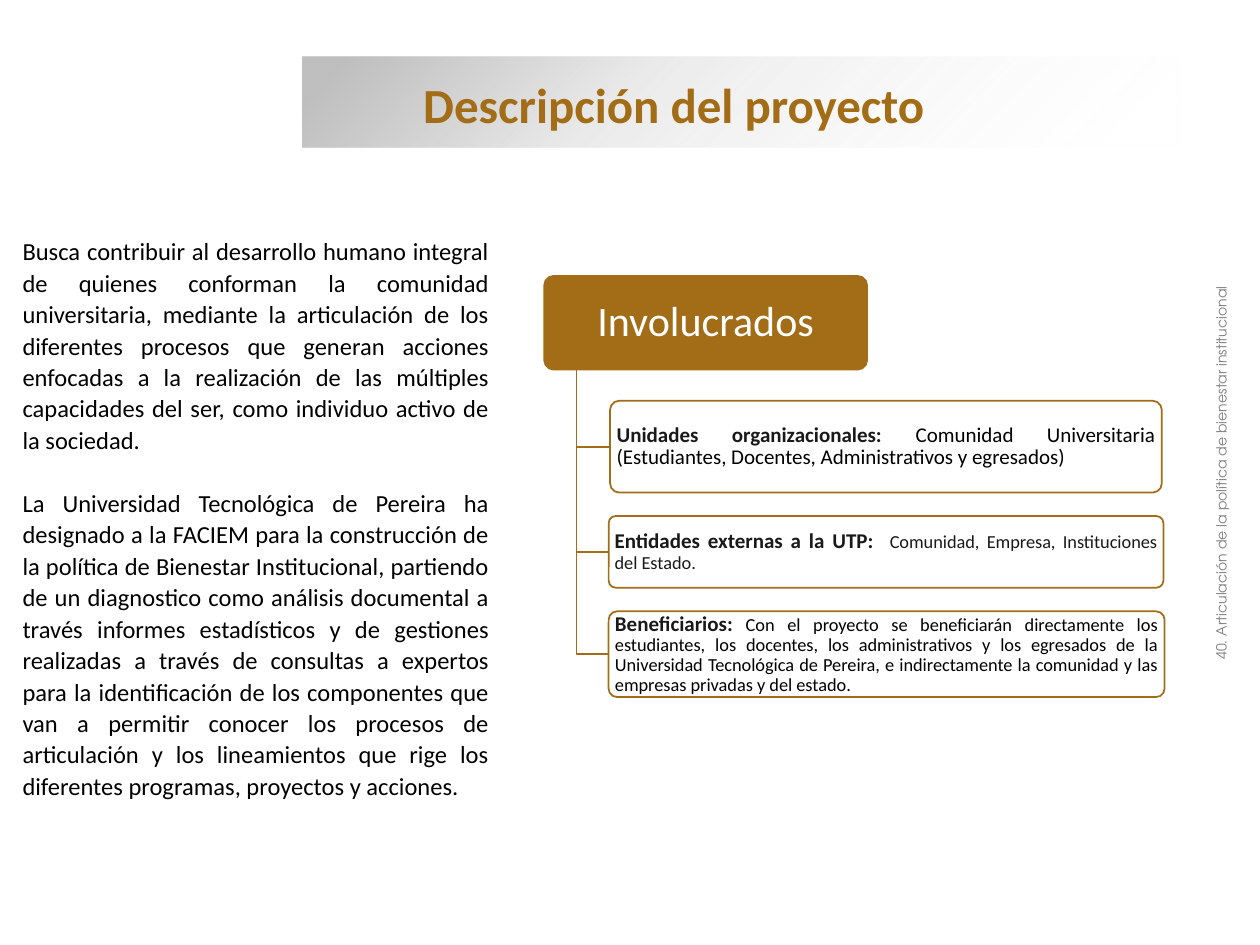
from dataclasses import dataclass
from lxml.etree import SubElement
from pptx import Presentation
from pptx.dml.color import RGBColor
from pptx.enum.shapes import MSO_SHAPE
from pptx.enum.text import MSO_ANCHOR, PP_ALIGN
from pptx.oxml.ns import qn
from pptx.util import Pt


@dataclass(frozen=True)
class Theme:
    gold: str = "A26D16"
    black: str = "000000"
    dark: str = "191919"
    gray: str = "808080"
    silver: str = "BFBFBF"
    white: str = "FFFFFF"
    sans: str = "Calibri"
    round: str = "TeX Gyre Adventor"
    title: float = 28
    head: float = 24
    body: float = 14
    card: float = 12
    small: float = 10.5
    side: float = 8


T = Theme()


def rgb(code):
    return RGBColor.from_string(code)


def apply(item, **vals):
    for name, val in vals.items():
        setattr(item, name, val)


def frame(shape, pad=(7.2, 3.6), anchor=MSO_ANCHOR.TOP):
    side, top = map(Pt, pad)
    apply(shape.text_frame, word_wrap=True, vertical_anchor=anchor,
          margin_left=side, margin_right=side, margin_top=top, margin_bottom=top)
    return shape.text_frame


def write(para, runs, **form):
    """Each run is (text, size, colour, bold)."""
    apply(para, **form)
    for text, size, color, bold in runs:
        run = para.add_run()
        run.text = text
        apply(run.font, name=T.sans, size=Pt(size), bold=bold)
        run.font.color.rgb = rgb(color)


def alpha(color, share):
    SubElement(color, qn("a:alpha"), val=str(share * 1000))


def fade(shape, stops):
    fill = shape.fill
    fill.gradient()
    fill.gradient_angle = 315
    group = shape.element.spPr.find(qn("a:gradFill")).find(qn("a:gsLst"))
    for old in list(group):
        group.remove(old)
    for pos, code, share in stops:
        stop = SubElement(group, qn("a:gs"), pos=str(pos * 1000))
        alpha(SubElement(stop, qn("a:srgbClr"), val=code), share)


def panel(slide, box, fill, share=100):
    shape = slide.shapes.add_shape(MSO_SHAPE.ROUNDED_RECTANGLE, *map(Pt, box))
    shape.shadow.inherit = False
    shape.adjustments[0] = 0.1
    shape.fill.solid()
    shape.fill.fore_color.rgb = rgb(fill)
    if share < 100:
        alpha(shape.element.spPr.find(qn("a:solidFill"))[0], share)
    shape.line.color.rgb = rgb(T.gold)
    shape.line.width = Pt(1)
    return shape


def elbow(slide, x, top, right, bottom):
    path = slide.shapes.build_freeform(Pt(x), Pt(top))
    path.add_line_segments([(Pt(x), Pt(bottom)), (Pt(right), Pt(bottom))], close=False)
    shape = path.convert_to_shape()
    shape.shadow.inherit = False
    shape.fill.background()
    shape.line.color.rgb = rgb(T.gold)
    shape.line.width = Pt(1)


def banner(slide, box, text):
    left, top, width, height = box
    bar = slide.shapes.add_shape(MSO_SHAPE.RECTANGLE, *map(Pt, box))
    bar.shadow.inherit = False
    bar.line.fill.background()
    fade(bar, [(5, T.silver, 100), (37, T.silver, 31), (100, T.white, 0)])
    label = slide.shapes.add_textbox(
        Pt(left + 62), Pt(top + 6.5), Pt(width - 56), Pt(41))
    write(frame(label, anchor=MSO_ANCHOR.MIDDLE).paragraphs[0],
          [(text, T.title, T.gold, True)])


def margin(slide, box, text):
    label = slide.shapes.add_textbox(*map(Pt, box))
    label.rotation = 270
    para = frame(label).paragraphs[0]
    write(para, [(text, T.side, T.gray, False)], alignment=PP_ALIGN.CENTER)
    para.runs[0].font.name = T.round


def prose(slide, box, texts):
    body = frame(slide.shapes.add_textbox(*map(Pt, box)))
    for i, text in enumerate(texts):
        para = body.add_paragraph() if i else body.paragraphs[0]
        write(para, [(text, T.body, T.black, False)], alignment=PP_ALIGN.JUSTIFY,
              line_spacing=1.07, space_before=Pt(18 if i else 0))


def tree(slide, box, title, cards):
    left, top, width, height = box
    # Head
    tall = 53.5
    head = panel(slide, (left, top, 184.5, tall), T.gold)
    write(frame(head, (3.6, 2.2), MSO_ANCHOR.MIDDLE).paragraphs[0],
          [(title, T.head, T.white, False)],
          alignment=PP_ALIGN.CENTER, line_spacing=0.9)
    # Cards, each hung from the stem
    stem, gap = left + 18.5, 13.4
    y = top + 71.3
    for indent, trim, high, runs in cards:
        x = left + indent
        elbow(slide, stem, top + tall, x, y + high / 2)
        card = panel(slide, (x, y, width - indent - trim, high), T.white, 90)
        write(frame(card, (2.2, 1.4), MSO_ANCHOR.MIDDLE).paragraphs[0], runs,
              alignment=PP_ALIGN.JUSTIFY, line_spacing=0.9)
        y += high + gap


PROSE = [
    "Busca contribuir al desarrollo humano integral de quienes conforman la comunidad "
    "universitaria, mediante la articulación de los diferentes procesos que generan "
    "acciones enfocadas a la realización de las múltiples capacidades del ser, como "
    "individuo activo de la sociedad.",
    "La Universidad Tecnológica de Pereira ha designado a la FACIEM para la construcción "
    "de la política de Bienestar Institucional, partiendo de un diagnostico como análisis "
    "documental a través informes estadísticos y de gestiones realizadas a través de "
    "consultas a expertos para la identificación de los componentes que van a permitir "
    "conocer los procesos de articulación y los lineamientos que rige los diferentes "
    "programas, proyectos y acciones.",
]

# Indent, right trim, height, runs
CARDS = [
    (37.6, 1.6, 52.5, [
        ("Unidades organizacionales: ", T.card, T.dark, True),
        ("Comunidad Universitaria (Estudiantes, Docentes, Administrativos y egresados)",
         T.card, T.black, False)]),
    (36.8, 0.7, 41, [
        ("Entidades externas a la UTP:  ", T.card, T.dark, True),
        ("Comunidad, Empresa, Instituciones del Estado.", T.small, T.dark, False)]),
    (36.8, 0, 49, [
        ("Beneficiarios:", T.card, T.dark, True),
        (" ", T.small, T.dark, True),
        ("Con el proyecto se beneficiarán directamente los estudiantes, los docentes, los "
         "administrativos y los egresados de la Universidad Tecnológica de Pereira, e "
         "indirectamente la comunidad y las empresas privadas y del estado.",
         T.small, T.black, False)]),
]


def main():
    deck = Presentation()
    apply(deck, slide_width=Pt(720), slide_height=Pt(540))
    slide = deck.slides.add_slide(deck.slide_layouts[6])
    banner(slide, (172.8, 32.4, 502.5, 52), "Descripción del proyecto")
    margin(slide, (528.5, 257, 348.5, 26.6),
           "40. Articulación de la política de bienestar institucional")
    tree(slide, (311, 157.7, 354.5, 239.7), "Involucrados", CARDS)
    prose(slide, (5.8, 130.3, 280.8, 333.4), PROSE)
    deck.save("out.pptx")


if __name__ == "__main__":
    main()
